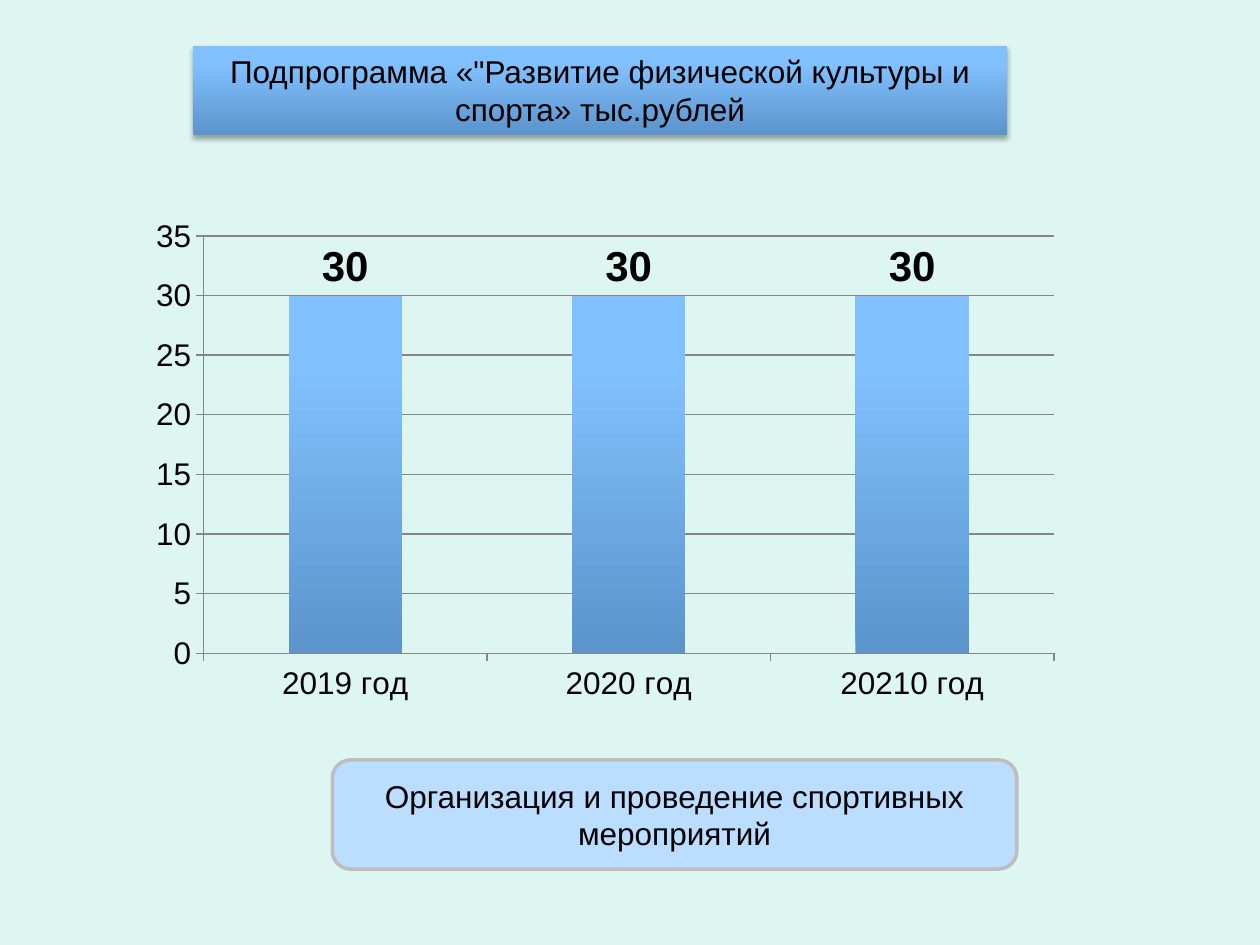
import copy

import pptx
import pptx.chart.data
import pptx.dml.color
import pptx.enum.chart
import pptx.enum.shapes
import pptx.enum.text
import pptx.oxml
import pptx.oxml.ns
import pptx.util
from pptx.util import Cm

NS = pptx.oxml.ns.nsdecls("a", "c")
qn = pptx.oxml.ns.qn
SHAPES = pptx.enum.shapes.MSO_SHAPE
ANCHORS = pptx.enum.text.MSO_ANCHOR


def rgb(value):
    return pptx.dml.color.RGBColor.from_string(value)


class Deck:
    """Holds the style and the current slide, and draws each kind of element."""

    font = "Arial"
    size = 18
    label_size = 24
    ink = "000000"
    axis = "868686"
    gradient = [(0, "5C94CB"), (0.8, "81C0FF"), (1, "82C1FF")]

    def __init__(self, prs, background):
        self.slide = prs.slides.add_slide(prs.slide_layouts[6])
        fill = self.slide.background.fill
        fill.solid()
        fill.fore_color.rgb = rgb(background)

    def style(self, font, size, bold=False):
        font.name = self.font
        font.size = pptx.util.Pt(size)
        font.bold = bold
        font.color.rgb = rgb(self.ink)

    def shade(self, fill, element):
        fill.gradient()
        fill.gradient_angle = 90
        stops = next(element.iter(qn("a:gsLst")))
        stops.append(copy.deepcopy(stops[-1]))
        for stop, (position, color) in zip(fill.gradient_stops, self.gradient):
            stop.position = position
            stop.color.rgb = rgb(color)

    def box(self, kind, place, text, anchor):
        sp = self.slide.shapes.add_shape(kind, *map(Cm, place))
        sp.shadow.inherit = False
        sp.line.fill.background()
        tf = sp.text_frame
        tf.word_wrap = True
        tf.vertical_anchor = anchor
        p = tf.paragraphs[0]
        p.text = text
        p.alignment = pptx.enum.text.PP_ALIGN.CENTER
        self.style(p.font, self.size)
        return sp

    def banner(self, place, text):
        sp = self.box(SHAPES.RECTANGLE, place, text, ANCHORS.TOP)
        sp.text_frame.auto_size = pptx.enum.text.MSO_AUTO_SIZE.SHAPE_TO_FIT_TEXT
        self.shade(sp.fill, sp._element)
        effects = next(sp._element.iter(qn("a:effectLst")))
        effects.append(pptx.oxml.parse_xml(
            f'<a:outerShdw {NS} blurRad="40000" dist="23000" dir="5400000" rotWithShape="0">'
            f'<a:srgbClr val="{self.ink}"><a:alpha val="35000"/></a:srgbClr></a:outerShdw>'))

    def card(self, place, text, fill, line):
        sp = self.box(SHAPES.ROUNDED_RECTANGLE, place, text, ANCHORS.MIDDLE)
        sp.fill.solid()
        sp.fill.fore_color.rgb = rgb(fill)
        sp.line.color.rgb = rgb(line)
        sp.line.width = pptx.util.Pt(2)

    def rule(self, line):
        line.color.rgb = rgb(self.axis)
        line.width = pptx.util.Pt(0.75)

    def columns(self, place, categories, name, values, layout):
        data = pptx.chart.data.CategoryChartData()
        data.categories = categories
        data.add_series(name, values)
        kind = pptx.enum.chart.XL_CHART_TYPE.COLUMN_CLUSTERED
        chart = self.slide.shapes.add_chart(kind, *map(Cm, place), data).chart
        chart.has_title = False
        chart.has_legend = False
        self.style(chart.font, self.size)

        for axis in (chart.category_axis, chart.value_axis):
            axis.major_tick_mark = pptx.enum.chart.XL_TICK_MARK.OUTSIDE
            self.rule(axis.format.line)
        axis = chart.value_axis
        axis.minimum_scale, axis.maximum_scale, axis.major_unit = 0, 35, 5
        axis.has_major_gridlines = True
        self.rule(axis.major_gridlines.format.line)

        plot = chart.plots[0]
        plot.vary_by_categories = False
        plot.gap_width = 150
        series = plot.series[0]
        self.shade(series.format.fill, series._element)
        labels = series.data_labels
        labels.show_value = True
        labels.position = pptx.enum.chart.XL_LABEL_POSITION.OUTSIDE_END
        self.style(labels.font, self.label_size, bold=True)

        area = next(chart._chartSpace.iter(qn("c:plotArea")))
        for old in area.findall(qn("c:layout")):
            area.remove(old)
        modes = '<c:xMode val="edge"/><c:yMode val="edge"/>'
        sizes = "".join(f'<c:{key} val="{value}"/>' for key, value in zip("xywh", layout))
        area.insert(0, pptx.oxml.parse_xml(
            f'<c:layout {NS}><c:manualLayout><c:layoutTarget val="inner"/>'
            f"{modes}{sizes}</c:manualLayout></c:layout>"))


def main():
    prs = pptx.Presentation()
    prs.slide_width, prs.slide_height = Cm(25.4), Cm(19.05)
    deck = Deck(prs, "DEF6F1")
    deck.banner((3.9, 0.92, 16.4, 1.8),
                "Подпрограмма «\"Развитие физической культуры и спорта» тыс.рублей")
    deck.columns((2.77, 4.4, 19.05, 10.82), ["2019 год", "2020 год", "20210 год"],
                 "Тыс. рублей", [30, 30, 30], (0.07, 0.03, 0.9, 0.78))
    deck.card((6.7, 15.32, 13.8, 2.2), "Организация и проведение спортивных мероприятий",
              "BBDDFF", "BDBDBD")
    prs.save("out.pptx")


if __name__ == "__main__":
    main()
